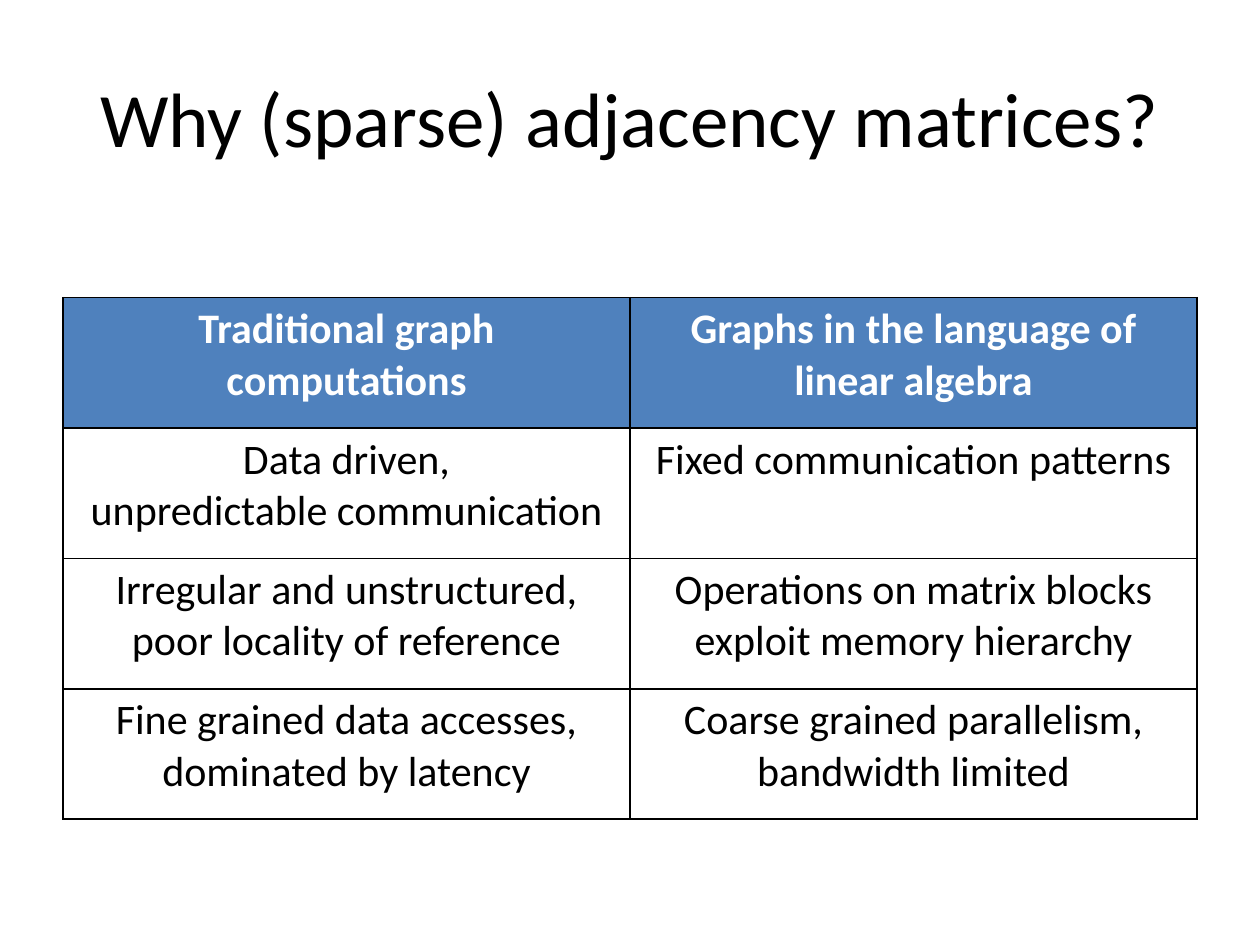
import pptx
import pptx.dml.color
import pptx.enum.text
import pptx.oxml
import pptx.oxml.ns
import pptx.util

COLORS = {"ink": "000000", "head": "4F81BD", "paper": "FFFFFF"}
ROWS = [
    ("Traditional graph computations", "Graphs in the language of linear algebra"),
    ("Data driven,\nunpredictable communication", "Fixed communication patterns"),
    ("Irregular and unstructured,\npoor locality of reference",
     "Operations on matrix blocks exploit memory hierarchy"),
    ("Fine grained data accesses,\ndominated by latency",
     "Coarse grained parallelism,\nbandwidth limited"),
]


def tint(name):
    return pptx.dml.color.RGBColor.from_string(COLORS[name])


def put(frame, text, size=24, color="ink", bold=False, face="Calibri"):
    """Fill a text frame with one centred paragraph; newlines become line breaks."""
    para = frame.paragraphs[0]
    para.alignment = pptx.enum.text.PP_ALIGN.CENTER
    for num, line in enumerate(text.split("\n")):
        if num:
            para.add_line_break()
        run = para.add_run()
        run.text = line
        run.font.size = pptx.util.Pt(size)
        run.font.name = face
        run.font.bold = bold
        run.font.color.rgb = tint(color)


def edge(cell, width=1):
    """Draw a solid line on all four sides of a cell."""
    props = cell._tc.get_or_add_tcPr()
    for num, side in enumerate(("lnL", "lnR", "lnT", "lnB")):
        props.insert(num, pptx.oxml.parse_xml(
            f'<a:{side} {pptx.oxml.ns.nsdecls("a")} w="{pptx.util.Pt(width)}">'
            f'<a:solidFill><a:srgbClr val="{COLORS["ink"]}"/></a:solidFill></a:{side}>'))


class Deck:
    """Holds the style and the current slide; lengths are shares of its size."""

    def __init__(self, wide=10, high=7.5):
        self.show = pptx.Presentation()
        self.show.slide_width = pptx.util.Inches(wide)
        self.show.slide_height = pptx.util.Inches(high)
        self.slide = self.show.slides.add_slide(self.show.slide_layouts[5])
        fill = self.slide.background.fill
        fill.solid()
        fill.fore_color.rgb = tint("paper")

    def box(self, left, top, width, height):
        wide, high = self.show.slide_width, self.show.slide_height
        return (round(left * wide), round(top * high),
                round(width * wide), round(height * high))

    def title(self, text, *area):
        shape = self.slide.shapes.title
        shape.left, shape.top, shape.width, shape.height = self.box(*area)
        shape.text_frame.vertical_anchor = pptx.enum.text.MSO_ANCHOR.MIDDLE
        put(shape.text_frame, text, size=44)

    def table(self, rows, *area):
        frame = self.slide.shapes.add_table(len(rows), len(rows[0]), *self.box(*area))
        for r, row in enumerate(rows):
            head = r == 0
            for c, text in enumerate(row):
                cell = frame.table.cell(r, c)
                cell.fill.solid()
                cell.fill.fore_color.rgb = tint("head" if head else "paper")
                put(cell.text_frame, text, color="paper" if head else "ink", bold=head)
                edge(cell)


def main():
    deck = Deck()
    deck.title("Why (sparse) adjacency matrices?", 0.05, 0.04, 0.9, 1 / 6)
    deck.table(ROWS, 0.05, 0.315, 0.9, 0.552)
    deck.show.save("out.pptx")


if __name__ == "__main__":
    main()
